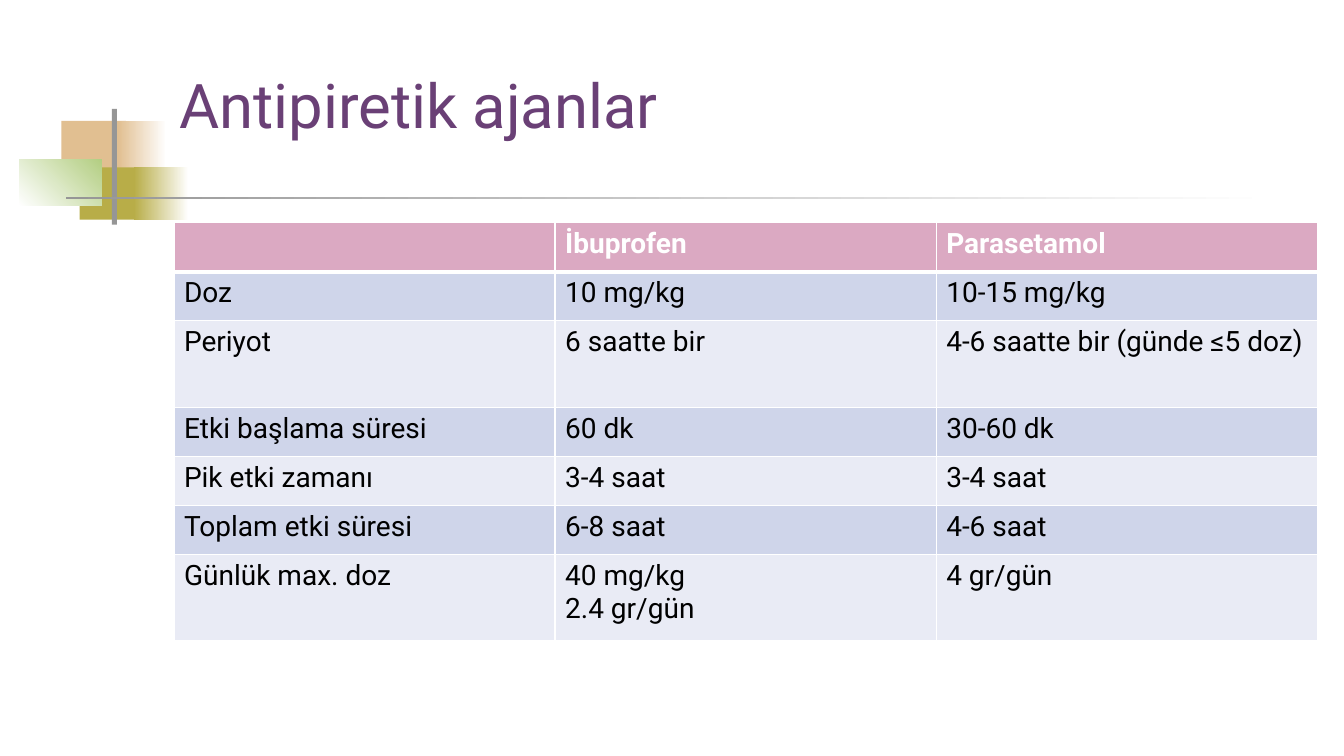
from dataclasses import dataclass

from lxml import etree
from pptx import Presentation
from pptx import util as u
from pptx.dml.color import RGBColor
from pptx.enum import shapes, text
from pptx.oxml import ns

WHITE = RGBColor(0xFF, 0xFF, 0xFF)
BLACK = RGBColor(0x00, 0x00, 0x00)
SAND = RGBColor(0xE1, 0xBF, 0x91)
OLIVE = RGBColor(0xB8, 0xAD, 0x48)
LEAF = RGBColor(0xB3, 0xCE, 0x82)
GREY = RGBColor(0x96, 0x96, 0x96)
PURPLE = RGBColor(0x6A, 0x40, 0x76)
PINK = RGBColor(0xDB, 0xA9, 0xC2)
BAND_DARK = RGBColor(0xCF, 0xD5, 0xEA)
BAND_LIGHT = RGBColor(0xE9, 0xEB, 0xF5)

TITLE_FONT = {"name": "Roboto", "size": u.Pt(44), "bold": False}
HEADER_FONT = {"name": "Roboto", "size": u.Pt(20), "bold": True}
BODY_FONT = {"name": "Roboto", "size": u.Pt(20), "bold": False}


@dataclass(frozen=True)
class Block:
    left: float
    top: float
    width: float
    height: float
    start: RGBColor
    end: RGBColor | None = None
    angle: float = 0


@dataclass(frozen=True)
class Row:
    height: float
    cells: tuple[str, str, str]


ORNAMENT = (
    Block(0.61, 1.2, 0.64, 0.52, SAND),
    Block(1.17, 1.2, 0.48, 0.52, SAND, WHITE),
    Block(0.79, 1.66, 0.61, 0.52, OLIVE),
    Block(1.33, 1.66, 0.54, 0.52, OLIVE, WHITE),
    Block(0.19, 1.58, 0.82, 0.46, WHITE, LEAF, 45),
    Block(1.11, 1.08, 0.05, 1.15, GREY),
    Block(0.65, 1.95, 11.99, 0.03, GREY, WHITE),
)

SINGLE, DOUBLE = 0.486, 0.86
DRUG_ROWS = (
    Row(SINGLE, ("", "İbuprofen", "Parasetamol")),
    Row(SINGLE, ("Doz", "10 mg/kg", "10-15 mg/kg")),
    Row(DOUBLE, ("Periyot", "6 saatte bir", "4-6 saatte bir (günde ≤5 doz)")),
    Row(SINGLE, ("Etki başlama süresi", "60 dk", "30-60 dk")),
    Row(SINGLE, ("Pik etki zamanı", "3-4 saat", "3-4 saat")),
    Row(SINGLE, ("Toplam etki süresi", "6-8 saat", "4-6 saat")),
    Row(DOUBLE, ("Günlük max. doz", "40 mg/kg\n2.4 gr/gün", "4 gr/gün")),
)
COLUMN_WIDTH = 3.78


def style_text(frame, font_format: dict, color: RGBColor) -> None:
    for paragraph in frame.paragraphs:
        for attribute, value in font_format.items():
            setattr(paragraph.font, attribute, value)
        paragraph.font.color.rgb = color
        for run in paragraph.runs:
            for attribute, value in font_format.items():
                setattr(run.font, attribute, value)
            run.font.color.rgb = color


def draw_block(slide, block: Block) -> None:
    bounds = (u.Inches(n) for n in (block.left, block.top, block.width, block.height))
    rectangle = slide.shapes.add_shape(shapes.MSO_SHAPE.RECTANGLE, *bounds)
    rectangle.shadow.inherit = False
    rectangle.line.fill.background()
    if block.end is None:
        rectangle.fill.solid()
        rectangle.fill.fore_color.rgb = block.start
        return
    rectangle.fill.gradient()
    rectangle.fill.gradient_angle = block.angle
    for stop, color in zip(rectangle.fill.gradient_stops, (block.start, block.end)):
        stop.color.rgb = color


def draw_title(slide, wording: str) -> None:
    title = slide.shapes.add_textbox(
        u.Inches(1.68), u.Inches(0.23), u.Inches(11.36), u.Inches(1.6)
    )
    frame = title.text_frame
    frame.word_wrap = True
    frame.vertical_anchor = text.MSO_ANCHOR.MIDDLE
    frame.text = wording
    style_text(frame, TITLE_FONT, PURPLE)


def draw_borders(cell, widths: dict[str, float]) -> None:
    properties = cell._tc.get_or_add_tcPr()
    for position, (side, width) in enumerate(widths.items()):
        line = etree.Element(ns.qn(f"a:{side}"), w=str(u.Pt(width)))
        fill = etree.SubElement(line, ns.qn("a:solidFill"))
        etree.SubElement(fill, ns.qn("a:srgbClr"), val=str(WHITE))
        properties.insert(position, line)


def draw_drug_table(slide, rows: tuple[Row, ...]) -> None:
    columns = len(rows[0].cells)
    table = slide.shapes.add_table(
        len(rows), columns, u.Inches(1.725), u.Inches(2.21),
        u.Inches(COLUMN_WIDTH * columns), u.Inches(sum(row.height for row in rows)),
    ).table
    for column in table.columns:
        column.width = u.Inches(COLUMN_WIDTH)
    for index, row in enumerate(rows):
        table.rows[index].height = u.Inches(row.height)
        is_header = index == 0
        band = PINK if is_header else (BAND_LIGHT, BAND_DARK)[index % 2]
        font_format = HEADER_FONT if is_header else BODY_FONT
        borders = {
            "lnL": 1,
            "lnR": 1,
            "lnT": 3 if index == 1 else 1,
            "lnB": 3 if is_header else 1,
        }
        for column_index, wording in enumerate(row.cells):
            cell = table.cell(index, column_index)
            cell.text = wording
            cell.fill.solid()
            cell.fill.fore_color.rgb = band
            style_text(cell.text_frame, font_format, WHITE if is_header else BLACK)
            draw_borders(cell, borders)


def main() -> None:
    deck = Presentation()
    deck.slide_width = u.Inches(13.33)
    deck.slide_height = u.Inches(7.5)
    slide = deck.slides.add_slide(deck.slide_layouts[6])
    for block in ORNAMENT:
        draw_block(slide, block)
    draw_title(slide, "Antipiretik ajanlar")
    draw_drug_table(slide, DRUG_ROWS)
    deck.save("out.pptx")


if __name__ == "__main__":
    main()
